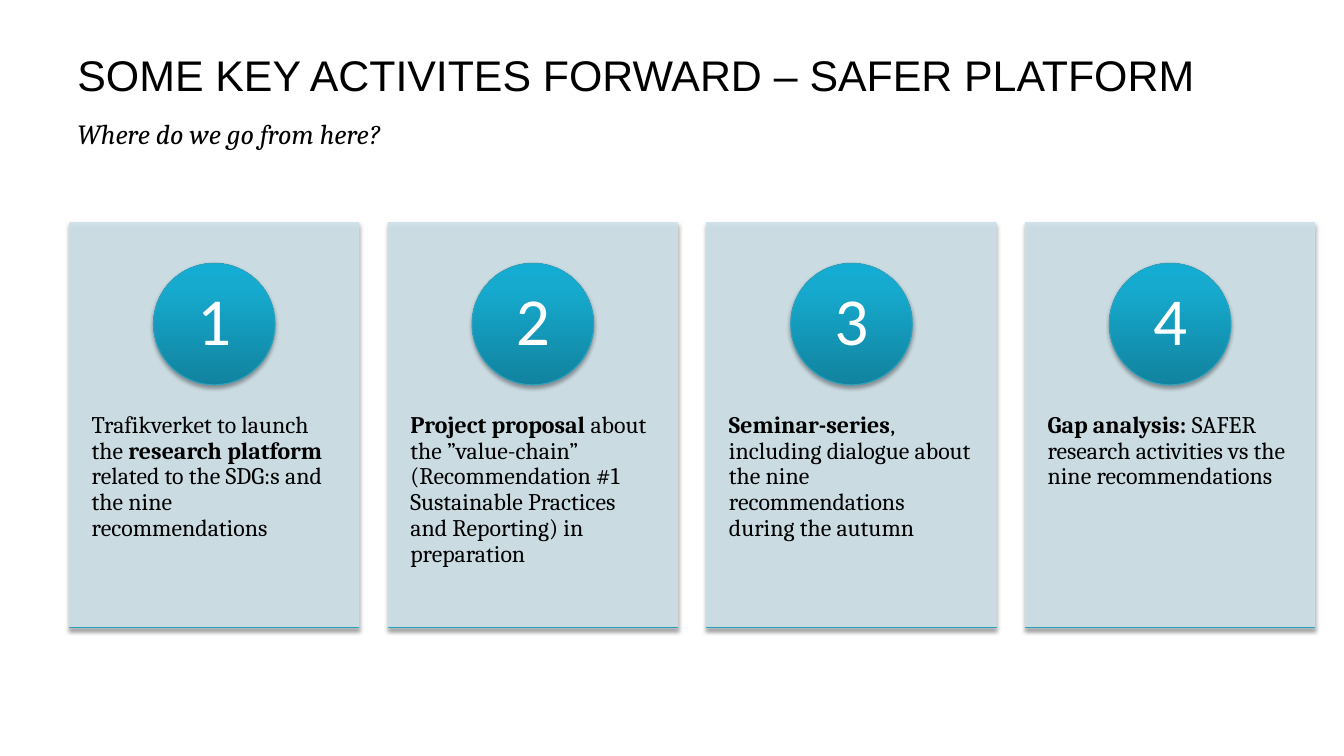
import dataclasses

import lxml.etree
import pptx
import pptx.dml.color
import pptx.enum.shapes
import pptx.enum.text
import pptx.oxml
import pptx.oxml.ns
import pptx.util


@dataclasses.dataclass(frozen=True)
class Theme:
    """Colours, fonts and type sizes of the slide."""
    ink: str = "000000"
    light: str = "FFFFFF"
    card: str = "CDE0E8"
    accent: str = "2DA2BF"
    gradient: tuple = ((0, "11839F"), (80, "16AACE"), (100, "13ADD3"))
    heading_font: str = "Arial"
    body_font: str = "Cambria"
    number_font: str = "Calibri"
    heading_size: float = 30.6
    subtitle_size: float = 19.8
    body_size: float = 17
    number_size: float = 48
    line_width: float = 0.75


THEME = Theme()
SLIDE_SIZE = (13.33, 7.5)
TITLE_BOX = (0.67, 0.29, 12, 1.25)
CARDS_BOX = (0.69, 2.21, 12.35, 4.02)
CARD_GAP = 0.29
ACTIVITIES = [
    [("Trafikverket to launch the ", False), ("research platform ", True),
     ("related to the SDG:s and the nine recommendations", False)],
    [("Project proposal ", True),
     ("about the ”value-chain” (Recommendation #1 Sustainable Practices and Reporting) in preparation", False)],
    [("Seminar-series", True),
     (", including dialogue about the nine recommendations during the autumn", False)],
    [("Gap analysis: ", True),
     ("SAFER research activities vs the nine recommendations", False)],
]


def inches(values):
    """Convert a sequence of inches to lengths."""
    return [pptx.util.Inches(value) for value in values]


def rgb(colour):
    """Convert a hexadecimal string to a colour."""
    return pptx.dml.color.RGBColor.from_string(colour)


def drawing_element(markup):
    """Parse markup whose root is an element of the drawing namespace."""
    name, rest = markup.split(">", 1)
    return pptx.oxml.parse_xml(f"{name} {pptx.oxml.ns.nsdecls('a')}>{rest}")


def add_run(paragraph, text, *, font, size, colour=THEME.ink, bold=False, italic=False):
    """Append formatted text to a paragraph."""
    run = paragraph.add_run()
    run.text = text
    run.font.name = font
    run.font.size = pptx.util.Pt(size)
    run.font.color.rgb = rgb(colour)
    run.font.bold = bold
    run.font.italic = italic


def add_text_box(slide, box, *, insets=(0.1, 0.05), anchor="TOP", align="LEFT", spacing=0.9):
    """Add a wrapping text box and return its first paragraph."""
    frame = slide.shapes.add_textbox(*inches(box)).text_frame
    frame.word_wrap = True
    frame.margin_left = frame.margin_right = pptx.util.Inches(insets[0])
    frame.margin_top = frame.margin_bottom = pptx.util.Inches(insets[1])
    frame.vertical_anchor = pptx.enum.text.MSO_ANCHOR[anchor]
    paragraph = frame.paragraphs[0]
    paragraph.alignment = pptx.enum.text.PP_ALIGN[align]
    paragraph.line_spacing = spacing
    return paragraph


def add_panel(slide, kind, box, *, line):
    """Add a preset shape with a thin line and a soft shadow below it."""
    shape = slide.shapes.add_shape(pptx.enum.shapes.MSO_SHAPE[kind], *inches(box))
    shape.shadow.inherit = False
    shape.line.color.rgb = rgb(line)
    shape.line.width = pptx.util.Pt(THEME.line_width)
    effects = shape.element.spPr.find(pptx.oxml.ns.qn("a:effectLst"))
    effects.append(drawing_element(
        f'<a:outerShdw blurRad="{pptx.util.Pt(3.1)}" dist="{pptx.util.Pt(1.8)}" '
        'dir="5400000" rotWithShape="0"><a:srgbClr val="000000">'
        '<a:alpha val="35000"/></a:srgbClr></a:outerShdw>'))
    return shape


def add_gradient_panel(slide, kind, box):
    """Add a shape that darkens towards its lower edge."""
    shape = add_panel(slide, kind, box, line=THEME.accent)
    stops = "".join(f'<a:gs pos="{share * 1000}"><a:srgbClr val="{colour}"/></a:gs>'
                    for share, colour in THEME.gradient)
    geometry = shape.element.spPr.find(pptx.oxml.ns.qn("a:prstGeom"))
    geometry.addnext(drawing_element(
        f'<a:gradFill><a:gsLst>{stops}</a:gsLst><a:lin ang="16200000" scaled="0"/></a:gradFill>'))


def add_card_background(slide, box):
    """Add the slightly transparent card behind an activity."""
    shape = add_panel(slide, "RECTANGLE", box, line=THEME.card)
    shape.fill.solid()
    shape.fill.fore_color.rgb = rgb(THEME.card)
    for colour in shape.element.spPr.iter(pptx.oxml.ns.qn("a:srgbClr")):
        if colour.get("val") == THEME.card:
            lxml.etree.SubElement(colour, pptx.oxml.ns.qn("a:alpha"), val="90000")


def add_title(slide, box):
    """Add the heading with its subtitle on a second line."""
    paragraph = add_text_box(slide, box, anchor="BOTTOM", spacing=pptx.util.Pt(36))
    add_run(paragraph, "SOME KEY ACTIVITES FORWARD – SAFER PLATFORM",
            font=THEME.heading_font, size=THEME.heading_size)
    paragraph.add_line_break()
    add_run(paragraph, "Where do we go from here?", font=THEME.body_font,
            size=THEME.subtitle_size, italic=True)


def add_card(slide, box, number, activity):
    """Add one numbered activity card."""
    left, top, width, height = box
    add_card_background(slide, box)
    paragraph = add_text_box(slide, (left, top + 0.38 * height, width, 0.6 * height),
                             insets=(0.22, 0.36))
    for text, bold in activity:
        add_run(paragraph, text, font=THEME.body_font, size=THEME.body_size, bold=bold)
    diameter = 0.3 * height
    circle_left, circle_top = left + (width - diameter) / 2, top + 0.1 * height
    add_gradient_panel(slide, "OVAL", (circle_left, circle_top, diameter, diameter))
    inset, side = 0.15 * diameter, 0.7 * diameter
    paragraph = add_text_box(slide, (circle_left + inset, circle_top + inset, side, side),
                             insets=(0.09, 0.01), anchor="MIDDLE", align="CENTER")
    add_run(paragraph, str(number), font=THEME.number_font, size=THEME.number_size,
            colour=THEME.light)
    add_gradient_panel(slide, "RECTANGLE", (left, top + height, width, 0))


def add_cards(slide, box, activities):
    """Lay the activity cards out in equal columns."""
    left, top, width, height = box
    pitch = (width + CARD_GAP) / len(activities)
    for index, activity in enumerate(activities):
        add_card(slide, (left + index * pitch, top, pitch - CARD_GAP, height),
                 index + 1, activity)


def main():
    """Build and save the presentation."""
    presentation = pptx.Presentation()
    presentation.slide_width, presentation.slide_height = inches(SLIDE_SIZE)
    slide = presentation.slides.add_slide(presentation.slide_layouts[6])
    add_title(slide, TITLE_BOX)
    add_cards(slide, CARDS_BOX, ACTIVITIES)
    presentation.save("out.pptx")


if __name__ == "__main__":
    main()
